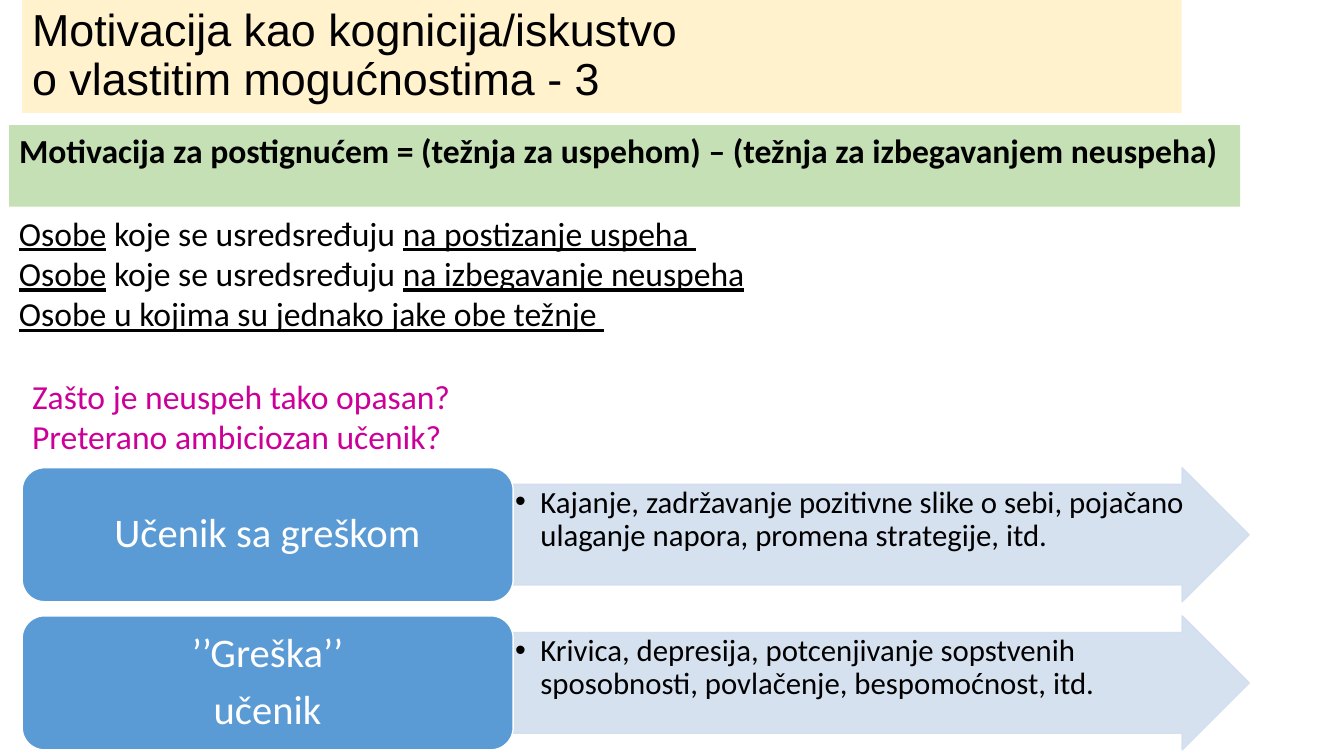
from dataclasses import dataclass
from typing import Any, NamedTuple

from lxml import etree
from pptx import Presentation
from pptx import util as u
from pptx.dml.color import RGBColor
from pptx.enum import shapes, text
from pptx.oxml import ns


@dataclass(frozen=True)
class Theme:
    title_fill: str = "FFF2CC"
    formula_fill: str = "C5E0B4"
    label_fill: str = "5B9BD5"
    arrow_fill: str = "D2DEEF"
    dark: str = "000000"
    light: str = "FFFFFF"
    accent: str = "CC0099"
    heading_font: str = "Arial"
    body_font: str = "Calibri"
    title_size: int = 32
    body_size: int = 24
    label_size: int = 29
    effect_size: int = 22
    arrow_alpha: int = 90000


class Box(NamedTuple):
    left: float
    top: float
    width: float
    height: float


class Span(NamedTuple):
    text: str
    underline: bool = False


@dataclass(frozen=True)
class Style:
    size: int
    color: str
    font: str = "Calibri"
    bold: bool = False
    align: Any = text.PP_ALIGN.LEFT
    anchor: Any = text.MSO_ANCHOR.TOP
    spacing: float = 1.0
    after: float = 0
    inset: tuple[float, float] = (0.1, 0.05)
    bullet: bool = False


@dataclass(frozen=True)
class Outcome:
    label: list[str]
    effect: str


T = Theme()
MIDDLE = text.MSO_ANCHOR.MIDDLE
TITLE = Style(T.title_size, T.dark, T.heading_font, anchor=MIDDLE, spacing=0.9)
FORMULA = Style(T.body_size, T.dark, T.body_font, bold=True)
BODY = Style(T.body_size, T.dark, T.body_font)
QUESTION = Style(T.body_size, T.accent, T.body_font)
LABEL = Style(T.label_size, T.light, T.body_font, align=text.PP_ALIGN.CENTER,
              anchor=MIDDLE, spacing=0.9, after=10, inset=(0.12, 0.06))
EFFECT = Style(T.effect_size, T.dark, T.body_font, spacing=0.9, after=3.3,
               inset=(0.02, 0.02), bullet=True)

PEOPLE = [
    [Span("Osobe", True), Span(" koje se usredsređuju "), Span("na postizanje uspeha ", True)],
    [Span("Osobe", True), Span(" koje se usredsređuju "), Span("na izbegavanje neuspeha", True)],
    [Span("Osobe u kojima su jednako jake obe težnje ", True)],
]
QUESTIONS = ["Zašto je neuspeh tako opasan?", "Preterano ambiciozan učenik?"]
OUTCOMES = [
    Outcome(["Učenik sa greškom"],
            "Kajanje, zadržavanje pozitivne slike o sebi, pojačano ulaganje napora, "
            "promena strategije, itd."),
    Outcome(["’’Greška’’", "učenik"],
            "Krivica, depresija, potcenjivanje sopstvenih sposobnosti, povlačenje, "
            "bespomoćnost, itd."),
]
ROW_LEFT, ROW_TOP, ROW_PITCH, ROW_HEIGHT = 0.22, 4.64, 1.47, 1.33
LABEL_WIDTH, ARROW_WIDTH = 4.87, 7.3


def plain(*lines: str) -> list[list[Span]]:
    return [[Span(line)] for line in lines]


def apply(target: Any, values: dict[str, Any]) -> None:
    for name, value in values.items():
        setattr(target, name, value)


def add_bullet(p: Any) -> None:
    pPr = p._p.get_or_add_pPr()
    pPr.set("marL", str(u.Inches(0.25)))
    pPr.set("indent", str(u.Inches(-0.25)))
    etree.SubElement(pPr, ns.qn("a:buFont")).set("typeface", "Arial")
    etree.SubElement(pPr, ns.qn("a:buChar")).set("char", "•")


def write(sp: Any, paragraphs: list[list[Span]], style: Style) -> None:
    tf = sp.text_frame
    side, edge = map(u.Inches, style.inset)
    apply(tf, {"word_wrap": True, "vertical_anchor": style.anchor,
               "margin_left": side, "margin_right": side,
               "margin_top": edge, "margin_bottom": edge})
    for i, spans in enumerate(paragraphs):
        p = tf.add_paragraph() if i else tf.paragraphs[0]
        apply(p, {"alignment": style.align, "line_spacing": style.spacing,
                  "space_after": u.Pt(style.after)})
        if style.bullet:
            add_bullet(p)
        for span in spans:
            for j, line in enumerate(span.text.split("\n")):
                if j:
                    p.add_line_break()
                r = p.add_run()
                r.text = line
                apply(r.font, {"name": style.font, "size": u.Pt(style.size),
                               "bold": style.bold, "underline": span.underline})
                r.font.color.rgb = RGBColor.from_string(style.color)


def add_text(s: Any, box: Box, paragraphs: list[list[Span]], style: Style) -> None:
    write(s.shapes.add_textbox(*map(u.Inches, box)), paragraphs, style)


def add_panel(s: Any, kind: Any, box: Box, fill: str, paragraphs: list[list[Span]],
              style: Style, line: str | None = None) -> Any:
    sp = s.shapes.add_shape(kind, *map(u.Inches, box))
    sp.shadow.inherit = False
    sp.fill.solid()
    sp.fill.fore_color.rgb = RGBColor.from_string(fill)
    if line:
        sp.line.color.rgb = RGBColor.from_string(line)
        sp.line.width = u.Pt(1)
    else:
        sp.line.fill.background()
    write(sp, paragraphs, style)
    return sp


def add_outcome(s: Any, outcome: Outcome, top: float) -> None:
    arrow = add_panel(s, shapes.MSO_SHAPE.RIGHT_ARROW,
                      Box(ROW_LEFT + LABEL_WIDTH, top, ARROW_WIDTH, ROW_HEIGHT),
                      T.arrow_fill, plain(outcome.effect), EFFECT, T.arrow_fill)
    arrow.adjustments[0] = 0.75
    arrow.adjustments[1] = 0.5
    for color in arrow._element.spPr.iter(ns.qn("a:srgbClr")):
        etree.SubElement(color, ns.qn("a:alpha")).set("val", str(T.arrow_alpha))
    add_panel(s, shapes.MSO_SHAPE.ROUNDED_RECTANGLE,
              Box(ROW_LEFT, top, LABEL_WIDTH, ROW_HEIGHT),
              T.label_fill, plain(*outcome.label), LABEL, T.light)


def main() -> None:
    prs = Presentation()
    prs.slide_width, prs.slide_height = u.Inches(13.33), u.Inches(7.5)
    s = prs.slides.add_slide(prs.slide_layouts[6])
    rectangle = shapes.MSO_SHAPE.RECTANGLE
    add_panel(s, rectangle, Box(0.09, 1.24, 12.21, 0.81), T.formula_fill,
              plain("Motivacija za postignućem = (težnja za uspehom) – "
                    "(težnja za izbegavanjem neuspeha)"), FORMULA)
    add_text(s, Box(0.09, 2.06, 10.44, 1.62), PEOPLE, BODY)
    add_panel(s, rectangle, Box(0.22, 0, 11.5, 1.12), T.title_fill,
              plain("Motivacija kao kognicija/iskustvo\no vlastitim mogućnostima - 3"), TITLE)
    add_text(s, Box(0.22, 3.68, 4.55, 0.91), plain(*QUESTIONS), QUESTION)
    for i, outcome in enumerate(OUTCOMES):
        add_outcome(s, outcome, ROW_TOP + i * ROW_PITCH)
    prs.save("out.pptx")


if __name__ == "__main__":
    main()
